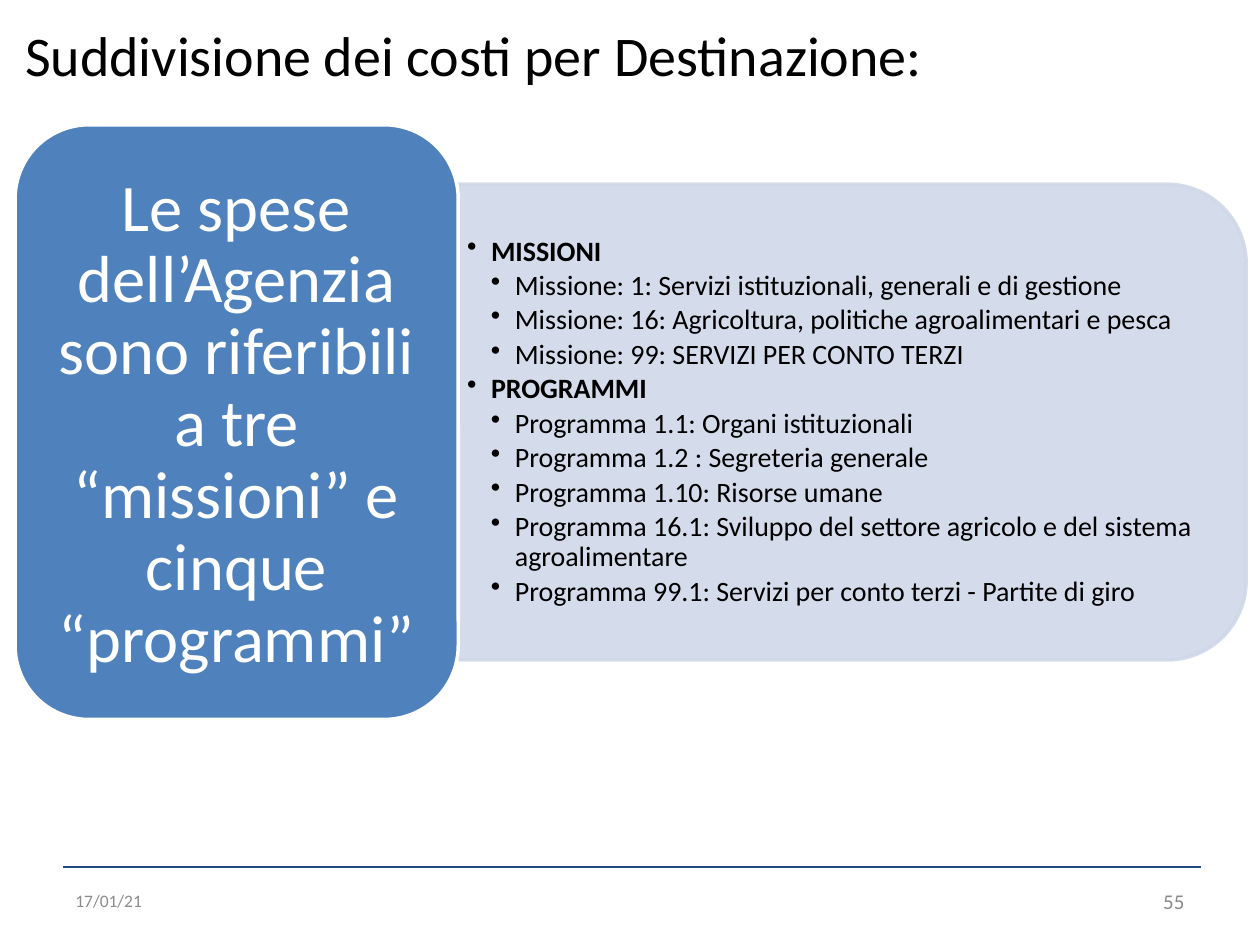
from dataclasses import dataclass

from lxml import etree
from pptx import Presentation
from pptx import util as u
from pptx.dml.color import RGBColor
from pptx.enum import shapes, text
from pptx.oxml import ns

WIDTH, HEIGHT = 10, 7.5
FONT = "Calibri"
INDENT = 0.19
SECTIONS = {
    "MISSIONI": [
        "Missione: 1: Servizi istituzionali, generali e di gestione",
        "Missione: 16: Agricoltura, politiche agroalimentari e pesca",
        "Missione: 99: SERVIZI PER CONTO TERZI",
    ],
    "PROGRAMMI": [
        "Programma 1.1: Organi istituzionali",
        "Programma 1.2 : Segreteria generale",
        "Programma 1.10: Risorse umane",
        "Programma 16.1: Sviluppo del settore agricolo e del sistema agroalimentare",
        "Programma 99.1: Servizi per conto terzi - Partite di giro",
    ],
}


@dataclass
class Box:
    left: float
    top: float
    width: float
    height: float

    def share(self, x, y, width, height):
        return Box(self.left + x * self.width, self.top + y * self.height,
                   width * self.width, height * self.height)

    def turned(self):
        return Box(self.left + (self.width - self.height) / 2,
                   self.top + (self.height - self.width) / 2,
                   self.height, self.width)

    def lengths(self):
        return [u.Inches(v) for v in (self.left, self.top, self.width, self.height)]


def color(value):
    return RGBColor.from_string(value)


def add_element(parent, tag, **attributes):
    return etree.SubElement(parent, ns.qn(tag), attributes)


def set_font(paragraph, size, value, bold=False):
    for run in paragraph.runs:
        run.font.name = FONT
        run.font.size = u.Pt(size)
        run.font.bold = bold
        run.font.color.rgb = color(value)


def add_text_frame(slide, box, insets=(0.1, 0.05, 0.1, 0.05),
                   anchor=text.MSO_ANCHOR.MIDDLE):
    frame = slide.shapes.add_textbox(*box.lengths()).text_frame
    frame.word_wrap = True
    frame.vertical_anchor = anchor
    (frame.margin_left, frame.margin_top,
     frame.margin_right, frame.margin_bottom) = map(u.Inches, insets)
    return frame


def add_label(slide, box, content, size, value, align=text.PP_ALIGN.LEFT, **options):
    frame = add_text_frame(slide, box, **options)
    frame.text = content
    paragraph = frame.paragraphs[0]
    paragraph.alignment = align
    set_font(paragraph, size, value)
    return paragraph


def add_block(slide, kind, box, fill, line):
    shape = slide.shapes.add_shape(kind, *box.lengths())
    shape.shadow.inherit = False
    shape.fill.solid()
    shape.fill.fore_color.rgb = color(fill)
    shape.line.color.rgb = color(line)
    shape.line.width = u.Pt(2)
    return shape


def add_bullet(paragraph, level):
    properties = paragraph._p.get_or_add_pPr()
    properties.set("marL", str(u.Inches(INDENT * (level + 1))))
    properties.set("indent", str(u.Inches(-INDENT)))
    add_element(properties, "a:buChar", char="•")
    paragraph.level = level


def add_list(slide, box):
    frame = add_text_frame(slide, box, insets=(0.07, 0.03, 0.07, 0.03))
    entries = [(level, entry) for heading, items in SECTIONS.items()
               for level, entry in [(0, heading), *((1, item) for item in items)]]
    for index, (level, entry) in enumerate(entries):
        paragraph = frame.add_paragraph() if index else frame.paragraphs[0]
        paragraph.text = entry
        add_bullet(paragraph, level)
        paragraph.line_spacing = 0.9
        paragraph.space_after = u.Pt(2.4)
        set_font(paragraph, 16, "000000", bold=level == 0)


def add_panel(slide, box):
    panel = add_block(slide, shapes.MSO_SHAPE.ROUND_2_SAME_RECTANGLE,
                      box.turned(), "D0D8E8", "D0D8E8")
    panel.rotation = 90
    for fill_color in panel._element.spPr.iter(ns.qn("a:srgbClr")):
        add_element(fill_color, "a:alpha", val="90000")
    add_list(slide, box.share(0, 0.05, 0.97, 0.9))


def add_card(slide, box):
    add_block(slide, shapes.MSO_SHAPE.ROUNDED_RECTANGLE, box, "4F81BD", "FFFFFF")
    paragraph = add_label(
        slide, box.share(0.05, 0.04, 0.9, 0.93),
        "Le spese dell’Agenzia sono riferibili a tre “missioni” e cinque “programmi”",
        38, "FFFFFF", text.PP_ALIGN.CENTER, insets=(0.16, 0.08, 0.16, 0.08))
    paragraph.line_spacing = 0.9


def add_diagram(slide, box):
    add_panel(slide, box.share(0.36, 0.1, 0.64, 0.8))
    add_card(slide, box.share(0, 0, 0.36, 1))


def add_footer(slide, box):
    left, top, width, _ = box.lengths()
    rule = slide.shapes.add_connector(shapes.MSO_CONNECTOR.STRAIGHT,
                                      left, top, left + width, top)
    rule.line.color.rgb = color("1F497D")
    rule.line.width = u.Pt(1.5)
    add_element(rule._element.spPr, "a:effectLst")
    add_label(slide, box.share(0, 0.15, 0.26, 0.85), "17/01/21", 10, "8C8C8C")
    add_label(slide, box.share(0.74, 0.15, 0.26, 0.85), "55", 12, "898989",
              text.PP_ALIGN.RIGHT, insets=(0.1, 0.05, 0.13, 0.05))


def main():
    presentation = Presentation()
    presentation.slide_width = u.Inches(WIDTH)
    presentation.slide_height = u.Inches(HEIGHT)
    slide = presentation.slides.add_slide(presentation.slide_layouts[6])
    add_footer(slide, Box(0.5, 6.88, 9.03, 0.47))
    add_diagram(slide, Box(0.12, 0.99, 9.77, 4.72))
    add_label(slide, Box(0.1, 0.11, 9.79, 0.81),
              "Suddivisione dei costi per Destinazione:", 32, "000000",
              anchor=text.MSO_ANCHOR.TOP)
    presentation.save("out.pptx")


if __name__ == "__main__":
    main()
